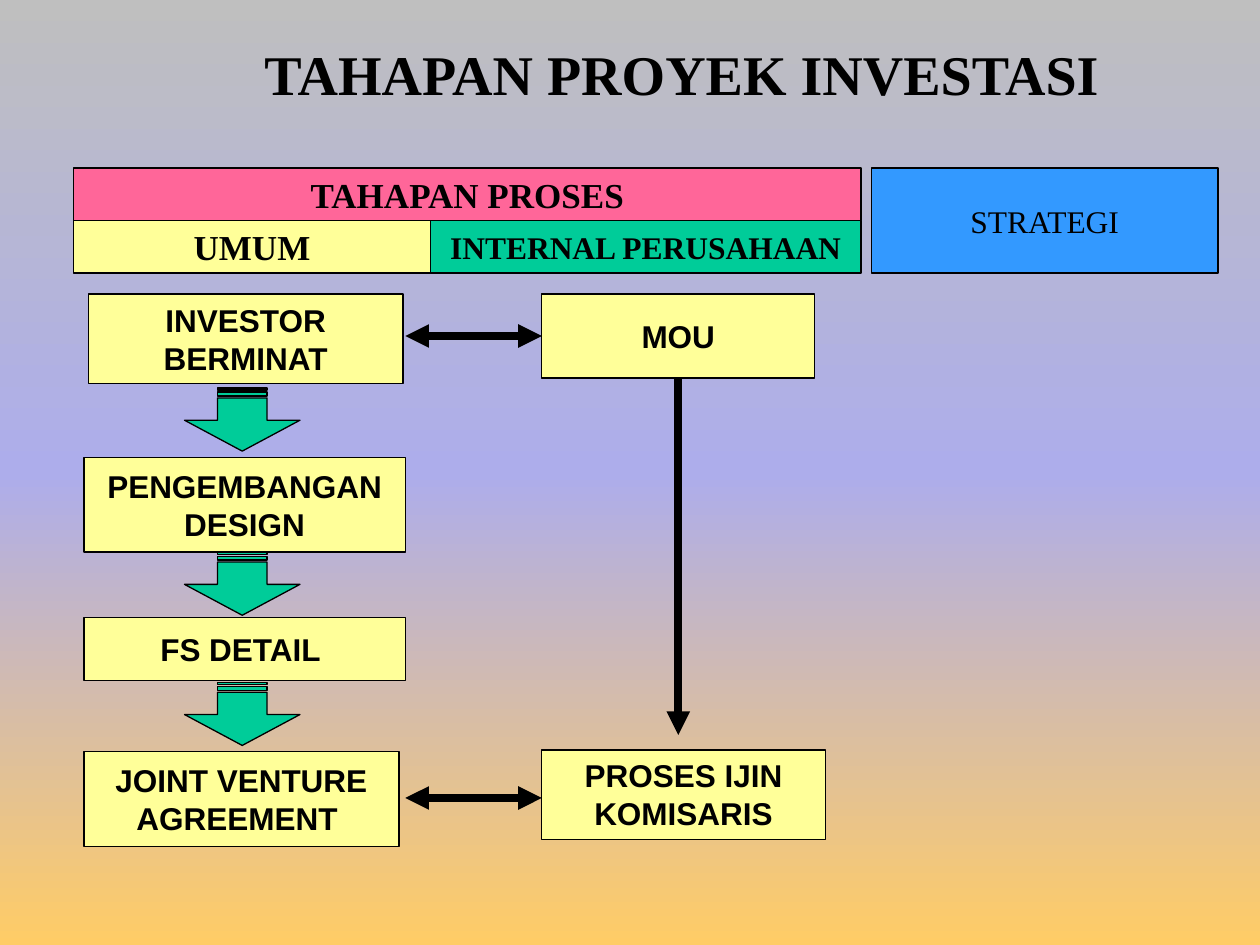
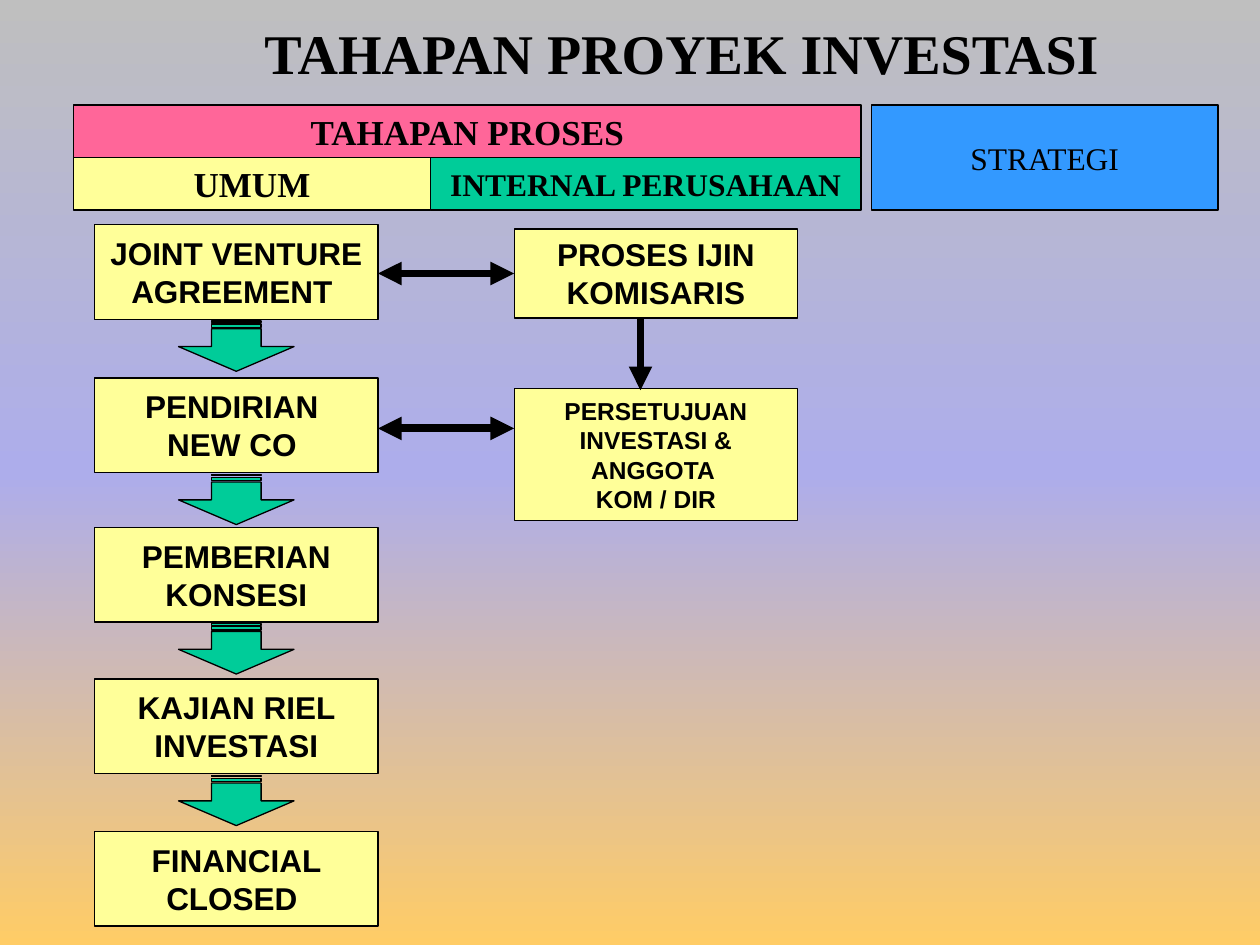
from copy import deepcopy

from lxml.etree import SubElement
from pptx import Presentation
from pptx.dml.color import RGBColor
from pptx.enum.shapes import MSO_CONNECTOR, MSO_SHAPE
from pptx.enum.text import MSO_ANCHOR, PP_ALIGN
from pptx.oxml.ns import qn
from pptx.util import Pt

BLACK = RGBColor(0x00, 0x00, 0x00)
GREY = RGBColor(0xBF, 0xBF, 0xBF)
LAVENDER = RGBColor(0xAD, 0xAD, 0xEB)
ORANGE = RGBColor(0xFF, 0xCC, 0x66)
YELLOW = RGBColor(0xFF, 0xFF, 0x99)
GREEN = RGBColor(0x00, 0xCC, 0x99)
BLUE = RGBColor(0x33, 0x99, 0xFF)
PINK = RGBColor(0xFF, 0x66, 0x99)
SERIF = "Times New Roman"
SANS = "Arial"

TOP, LEFT, BOTTOM = 0, 1, 2
ARROW_SPAN = 66


def style_text(frame, text, font, size, bold=True, align=PP_ALIGN.CENTER):
    frame.text = text
    for para in frame.paragraphs:
        para.alignment = align
        para.font.name = font
        para.font.size = Pt(size)
        para.font.bold = bold
        para.font.color.rgb = BLACK


def style_shape(shape, fill):
    shape.shadow.inherit = False
    shape.fill.solid()
    shape.fill.fore_color.rgb = fill
    shape.line.color.rgb = BLACK
    shape.line.width = Pt(0.75)


def add_box(page, left, top, width, height, text, fill=YELLOW, font=SANS,
            size=18, bold=True, wrap=True, anchor=MSO_ANCHOR.MIDDLE):
    box = page.shapes.add_shape(
        MSO_SHAPE.RECTANGLE, Pt(left), Pt(top), Pt(width), Pt(height))
    style_shape(box, fill)
    style_text(box.text_frame, text, font, size, bold)
    box.text_frame.word_wrap = wrap
    box.text_frame.vertical_anchor = anchor
    return box


def add_down_arrow(page, center, top, length):
    arrow = page.shapes.add_shape(
        MSO_SHAPE.STRIPED_RIGHT_ARROW,
        Pt(center - length / 2), Pt(top + (length - ARROW_SPAN) / 2),
        Pt(length), Pt(ARROW_SPAN))
    arrow.rotation = 90
    arrow.adjustments[0] = 0.43
    arrow.adjustments[1] = 0.49
    style_shape(arrow, GREEN)


def add_line(page, start, end, double=True):
    line = page.shapes.add_connector(
        MSO_CONNECTOR.STRAIGHT, *(Pt(value) for value in (*start, *end)))
    line.line.color.rgb = BLACK
    line.line.width = Pt(4.5)
    outline = line.line._get_or_add_ln()
    for tag in ("a:headEnd", "a:tailEnd") if double else ("a:tailEnd",):
        SubElement(outline, qn(tag), type="triangle")
    SubElement(line.element.spPr, qn("a:effectLst"))
    return line


def paint_background(page):
    fill = page.background.fill
    fill.gradient()
    fill.gradient_angle = 270
    stop_list = page.element.find(".//" + qn("a:gsLst"))
    stop_list.insert(1, deepcopy(stop_list[0]))
    for stop, position, color in zip(
            fill.gradient_stops, (0, 0.5, 1), (GREY, LAVENDER, ORANGE)):
        stop.position = position
        stop.color.rgb = color


def add_page(deck, title_top, header_top):
    page = deck.slides.add_slide(deck.slide_layouts[6])
    paint_background(page)
    title = page.shapes.add_textbox(Pt(144), Pt(title_top), Pt(540), Pt(60))
    style_text(title.text_frame, "TAHAPAN PROYEK INVESTASI", SERIF, 32,
               align=PP_ALIGN.LEFT)
    title.text_frame.word_wrap = True
    title.text_frame.vertical_anchor = MSO_ANCHOR.MIDDLE

    headers = (
        (42, 30, 204, 30, "UMUM", YELLOW, 20, True),
        (246, 30, 246, 30, "INTERNAL PERUSAHAAN", GREEN, 18, True),
        (498, 0, 198, 60, "STRATEGI", BLUE, 18, False),
        (42, 0, 450, 30, "TAHAPAN PROSES", PINK, 20, True),
    )
    for left, offset, width, height, text, fill, size, bold in headers:
        add_box(page, left, header_top + offset, width, height, text,
                fill, SERIF, size, bold, wrap=False)
    return page


def add_permit_box(page, left, top):
    return add_box(page, left, top, 162, 51, "PROSES IJIN KOMISARIS",
                   anchor=MSO_ANCHOR.TOP)


def build_early_stages(deck):
    page = add_page(deck, 12, 96)
    for top in (221.8, 315.6, 390):
        add_down_arrow(page, 138.4, top, 36)
    add_box(page, 50.4, 168, 180, 51, "INVESTOR BERMINAT")
    add_box(page, 48, 261.5, 183.6, 54, "PENGEMBANGAN DESIGN")
    add_box(page, 48, 352.8, 183.6, 36, "FS DETAIL ")
    add_box(page, 48, 429.6, 180, 54, "JOINT VENTURE AGREEMENT ")
    memorandum = add_box(page, 309.6, 168, 156, 48, "MOU")
    add_permit_box(page, 309.6, 428.6)

    add_line(page, (231.6, 192), (309.6, 192)).end_connect(memorandum, LEFT)
    add_line(page, (387.6, 216), (387.6, 420), double=False).begin_connect(
        memorandum, BOTTOM)
    add_line(page, (231.6, 456), (309.6, 456))


def build_late_stages(deck):
    page = add_page(deck, 0, 60)
    left, width, height = 54, 162, 54
    stages = (
        (128.4, "JOINT VENTURE AGREEMENT "),
        (216, "PENDIRIAN \nNEW CO "),
        (301.4, "PEMBERIAN KONSESI"),
        (388, "KAJIAN RIEL INVESTASI"),
        (475.2, "FINANCIAL CLOSED "),
    )
    for top, text in stages:
        add_box(page, left, top, width, height, text)
    for top, _ in stages[:-1]:
        add_down_arrow(page, left + width / 2, top + height + 1, 28.8)

    permit = add_permit_box(page, 293.8, 130.8)
    add_box(page, 293.8, 222, 162, 75.6,
            "PERSETUJUAN INVESTASI & ANGGOTA \nKOM / DIR", size=14)
    add_line(page, (216, 156.3), (293.8, 156.3)).end_connect(permit, LEFT)
    add_line(page, (366, 181.5), (366, 223), double=False)
    add_line(page, (216, 244.8), (293.8, 244.8))


def main():
    deck = Presentation()
    deck.slide_width = Pt(720)
    deck.slide_height = Pt(540)
    build_early_stages(deck)
    build_late_stages(deck)
    deck.save("out.pptx")


if __name__ == "__main__":
    main()
